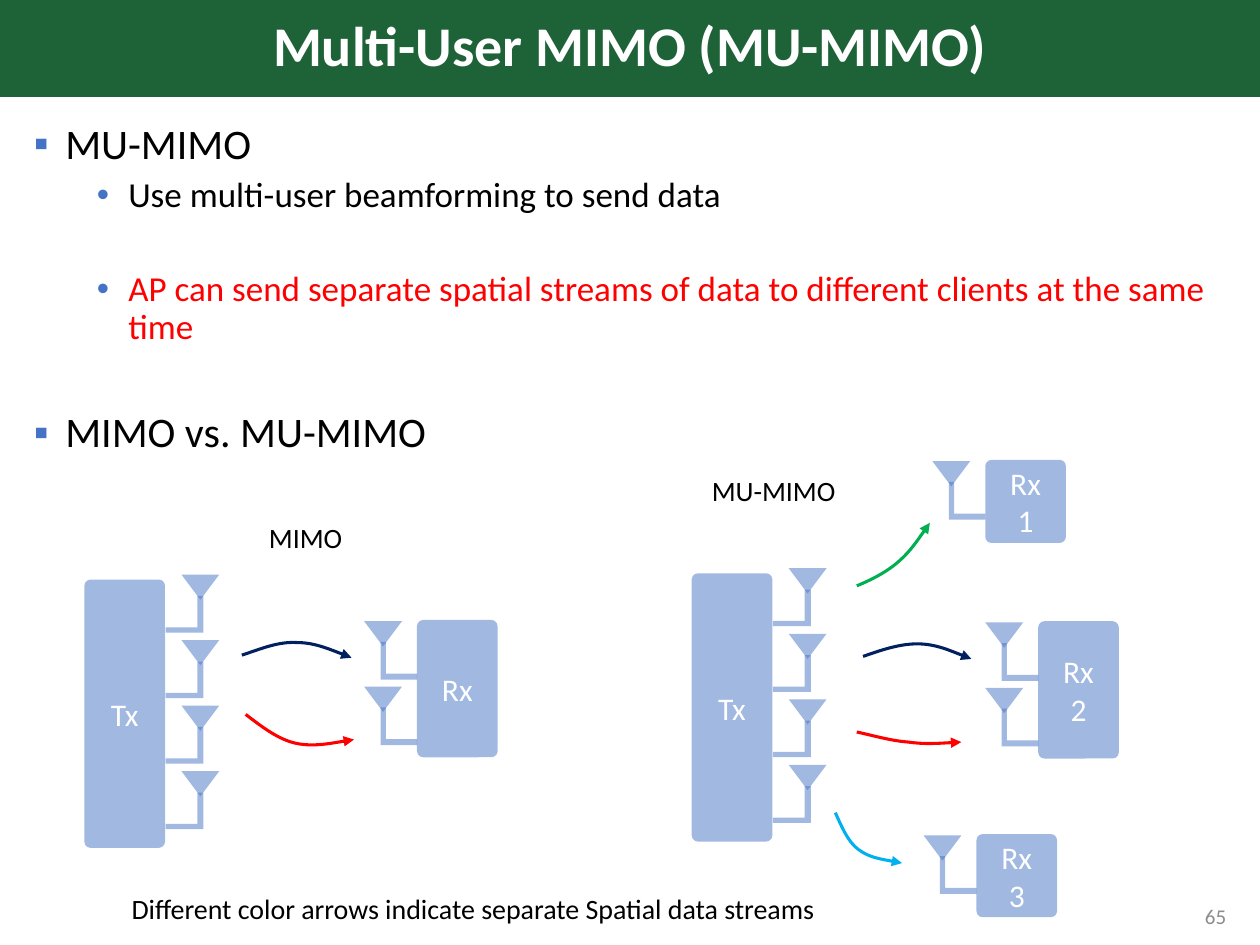
from lxml import etree
from pptx import Presentation
from pptx.dml.color import RGBColor
from pptx.enum.shapes import MSO_SHAPE
from pptx.enum.text import MSO_ANCHOR, PP_ALIGN
from pptx.oxml.ns import qn
from pptx.util import Inches, Pt

ROUNDED = MSO_SHAPE.ROUNDED_RECTANGLE
TRIANGLE = MSO_SHAPE.ISOSCELES_TRIANGLE
CORNER = MSO_SHAPE.CORNER
LEFT, CENTER, RIGHT = PP_ALIGN.LEFT, PP_ALIGN.CENTER, PP_ALIGN.RIGHT
TOP, MIDDLE = MSO_ANCHOR.TOP, MSO_ANCHOR.MIDDLE

FONT = "Calibri"
WIDTH, HEIGHT = 10, 7.5
GREEN, BLUE, WHITE, BLACK, GRAY = "1E6238", "4472C4", "FFFFFF", "000000", "8C8C8C"
NAVY, RED, LIME, SKY = "002060", "FF0000", "00B050", "00B0F0"

BOX_WIDTH, TX_HEIGHT = 0.64, 2.13
DISH_WIDTH, DISH_HEIGHT = 0.3, 0.2
MAST_WIDTH, MAST_HEIGHT, MAST_DROP = 0.29, 0.3, 0.165
ANTENNA_PITCH = 0.52

BODY = [
    ("MU-MIMO", 0, BLACK, 10),
    ("Use multi-user beamforming to send data", 1, BLACK, 5),
    ("AP can send separate spatial streams of data to different clients at the same time",
     1, RED, 32),
    ("MIMO vs. MU-MIMO", 0, BLACK, 37),
]
LEVELS = [("▪", 0.25, 24), ("•", 0.75, 20)]

TRANSMITTERS = [(0.67, 4.6), (5.49, 4.55)]
RECEIVERS = [
    ("Rx", 3.31, 4.92, 1.09, 2),
    ("Rx 2", 8.24, 4.93, 1.09, 2),
    ("Rx 1", 7.82, 3.65, 0.66, 1),
    ("Rx 3", 7.75, 6.62, 0.66, 1),
]
STREAMS = [
    (NAVY, [(1.92, 5.2), (2.07, 5.15), (2.21, 5.09), (2.36, 5.1),
            (2.5, 5.1), (2.79, 5.22), (2.79, 5.22)]),
    (RED, [(1.95, 5.67), (2.08, 5.77), (2.21, 5.87), (2.35, 5.9),
           (2.49, 5.93), (2.81, 5.87), (2.81, 5.87)]),
    (NAVY, [(6.85, 5.21), (6.99, 5.16), (7.14, 5.11), (7.28, 5.11),
            (7.43, 5.11), (7.71, 5.23), (7.71, 5.23)]),
    (RED, [(6.8, 5.81), (6.94, 5.84), (7.07, 5.88), (7.21, 5.89),
           (7.35, 5.91), (7.63, 5.89), (7.63, 5.89)]),
    (LIME, [(6.8, 4.65), (6.92, 4.6), (7.04, 4.54), (7.14, 4.45),
            (7.23, 4.37), (7.38, 4.15), (7.38, 4.15)]),
    (SKY, [(6.63, 6.45), (6.68, 6.56), (6.73, 6.68), (6.81, 6.74),
           (6.9, 6.81), (7.16, 6.85), (7.16, 6.85)]),
]
LABELS = [
    ("Different color arrows indicate separate Spatial data streams",
     0.83, 7.03, 5.85, 0.37, 16, BLACK, CENTER, TOP),
    ("MIMO", 1.9, 4.08, 1.05, 0.37, 16, BLACK, CENTER, TOP),
    ("MU-MIMO", 5.49, 3.71, 1.3, 0.37, 16, BLACK, CENTER, TOP),
    ("65", 7.58, 7.07, 2.25, 0.4, 12, GRAY, RIGHT, MIDDLE),
]


def rgb(value):
    """Turn a hex string into a colour."""
    return RGBColor.from_string(value)


def place(left, top, width, height):
    """Convert a box in inches to slide units."""
    return [Inches(length) for length in (left, top, width, height)]


def add_run(paragraph, text, size, color, bold=False):
    """Add one formatted run to a paragraph."""
    run = paragraph.add_run()
    run.text = text
    run.font.name = FONT
    run.font.size = Pt(size)
    run.font.bold = bold
    run.font.color.rgb = rgb(color)


def write(shape, text, size, color, align, anchor, bold=False):
    """Write a single paragraph into a shape."""
    frame = shape.text_frame
    frame.word_wrap = True
    frame.vertical_anchor = anchor
    paragraph = frame.paragraphs[0]
    paragraph.alignment = align
    add_run(paragraph, text, size, color, bold)
    return paragraph


def add_title(slide, text):
    """Format the title placeholder as a full-width banner."""
    title = slide.shapes.title
    title.left, title.top, title.width, title.height = place(0, 0, WIDTH, 0.77)
    title.fill.solid()
    title.fill.fore_color.rgb = rgb(GREEN)
    write(title, text, 32, WHITE, CENTER, MIDDLE, bold=True).line_spacing = 0.9


def add_bullet(paragraph, mark, indent):
    """Give a paragraph a hanging coloured bullet."""
    properties = paragraph._p.get_or_add_pPr()
    properties.set("marL", str(Inches(indent)))
    properties.set("indent", str(Inches(-0.25)))
    color = etree.SubElement(properties, qn("a:buClr"))
    etree.SubElement(color, qn("a:srgbClr"), val=BLUE)
    etree.SubElement(properties, qn("a:buFont"), typeface="Arial")
    etree.SubElement(properties, qn("a:buChar"), char=mark)


def add_body(slide):
    """Add the two-level bullet list."""
    frame = slide.shapes.add_textbox(*place(0.17, 0.93, 9.66, 6.41)).text_frame
    frame.word_wrap = True
    for index, (text, level, color, space) in enumerate(BODY):
        paragraph = frame.add_paragraph() if index else frame.paragraphs[0]
        mark, indent, size = LEVELS[level]
        paragraph.level = level
        paragraph.line_spacing = 0.9
        paragraph.space_before = Pt(space)
        add_bullet(paragraph, mark, indent)
        add_run(paragraph, text, size, color)


def add_part(slide, kind, box, adjustments=(), rotation=0):
    """Add a half-transparent blue shape without outline."""
    shape = slide.shapes.add_shape(kind, *place(*box))
    shape.shadow.inherit = False
    shape.rotation = rotation
    for index, value in enumerate(adjustments):
        shape.adjustments[index] = value
    shape.fill.solid()
    shape.fill.fore_color.rgb = rgb(BLUE)
    color = next(shape._element.spPr.iter(qn("a:srgbClr")))
    etree.SubElement(color, qn("a:alpha"), val="50000")
    shape.line.fill.background()
    return shape


def add_antenna(slide, mast_left, top, dish_left, rotation):
    """Add a dish with its bent mast."""
    mast = (mast_left, top + MAST_DROP, MAST_WIDTH, MAST_HEIGHT)
    add_part(slide, CORNER, mast, (0.166, 0.144), rotation)
    add_part(slide, TRIANGLE, (dish_left, top, DISH_WIDTH, DISH_HEIGHT), rotation=180)


def add_device(slide, text, left, top, height):
    """Add a labelled radio box."""
    box = add_part(slide, ROUNDED, (left, top, BOX_WIDTH, height), (0.077,))
    write(box, text, 18, WHITE, CENTER, MIDDLE)


def add_transmitter(slide, left, top):
    """Add a transmitter with four antennas on its right."""
    add_device(slide, "Tx", left, top, TX_HEIGHT)
    side = left + BOX_WIDTH
    for row in range(4):
        add_antenna(slide, side + 0.01, top - 0.04 + row * ANTENNA_PITCH, side + 0.13, 270)


def add_receiver(slide, text, left, top, height, antennas):
    """Add a receiver with antennas on its left."""
    add_device(slide, text, left, top, height)
    for row in range(antennas):
        add_antenna(slide, left - MAST_WIDTH, top + 0.01 + row * ANTENNA_PITCH, left - 0.42, 0)


def add_stream(slide, color, points):
    """Add a curved arrow of two cubic segments."""
    start, *controls = [(Inches(x), Inches(y)) for x, y in points]
    builder = slide.shapes.build_freeform(*start)
    builder.add_line_segments(controls, close=False)
    shape = builder.convert_to_shape()
    shape.shadow.inherit = False
    shape.fill.background()
    shape.line.color.rgb = rgb(color)
    shape.line.width = Pt(1.75)
    properties = shape._element.spPr
    etree.SubElement(properties.find(qn("a:ln")), qn("a:tailEnd"), type="triangle")
    outline = next(properties.iter(qn("a:path")))
    lines = outline.findall(qn("a:lnTo"))
    for first in range(0, len(lines), 3):
        curve = etree.SubElement(outline, qn("a:cubicBezTo"))
        for line in lines[first:first + 3]:
            curve.append(line[0])
            outline.remove(line)


def main():
    """Build and save the slide."""
    presentation = Presentation()
    presentation.slide_width, presentation.slide_height = Inches(WIDTH), Inches(HEIGHT)
    slide = presentation.slides.add_slide(presentation.slide_layouts[5])
    add_title(slide, "Multi-User MIMO (MU-MIMO)")
    add_body(slide)
    for transmitter in TRANSMITTERS:
        add_transmitter(slide, *transmitter)
    for receiver in RECEIVERS:
        add_receiver(slide, *receiver)
    for stream in STREAMS:
        add_stream(slide, *stream)
    for text, left, top, width, height, *style in LABELS:
        write(slide.shapes.add_textbox(*place(left, top, width, height)), text, *style)
    presentation.save("out.pptx")


if __name__ == "__main__":
    main()
